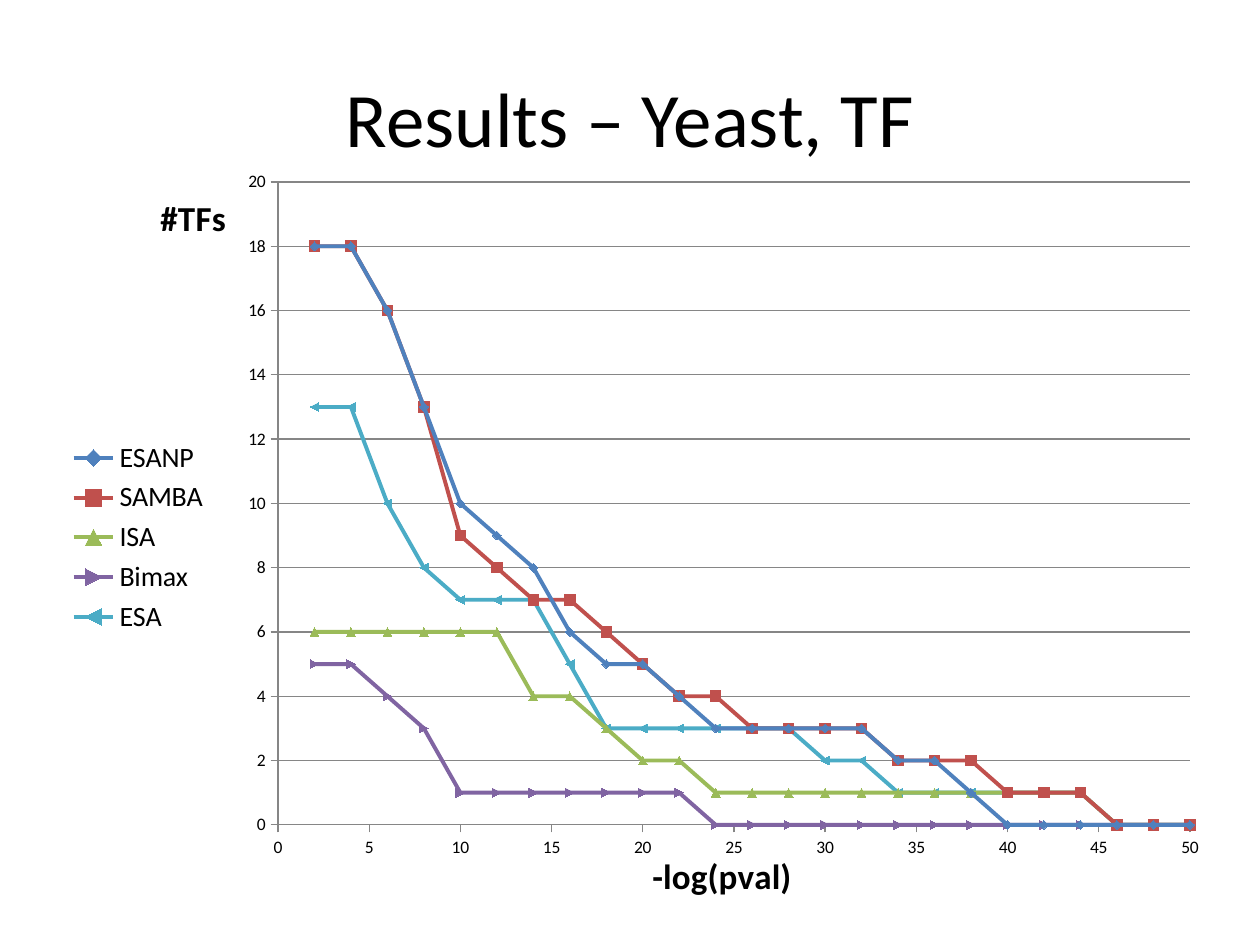
import dataclasses
import typing

import lxml.etree
import pptx
import pptx.chart.data
import pptx.dml.color
import pptx.enum.chart
import pptx.enum.text
import pptx.oxml.ns
import pptx.util

EMU_PER_PX = 914400 / 126
CHART_WIDTH = 1171
CHART_HEIGHT = 745


@dataclasses.dataclass(frozen=True)
class Theme:
    font: str = "Calibri"
    ink: str = "000000"
    rule: str = "868686"
    title_size: int = 44
    axis_title_size: int = 20
    legend_size: int = 16
    tick_size: int = 10
    curve_width: float = 2.25
    rule_width: float = 0.75


@dataclasses.dataclass(frozen=True)
class Curve:
    name: str
    color: str
    counts: tuple[int, ...]
    marker_size: int = 5
    marker_style: typing.Any = None


@dataclasses.dataclass(frozen=True)
class AxisLabel:
    text: str
    left: int
    top: int
    gridlines: bool


THEME = Theme()
THRESHOLDS = range(50, 0, -2)
CURVES = (
    Curve("ESANP", "4F81BD",
          (0, 0, 0, 0, 0, 0, 1, 2, 2, 3, 3, 3, 3, 3, 4, 5, 5, 6, 8, 9, 10, 13, 16, 18, 18)),
    Curve("SAMBA", "C0504D",
          (0, 0, 0, 1, 1, 1, 2, 2, 2, 3, 3, 3, 3, 4, 4, 5, 6, 7, 7, 8, 9, 13, 16, 18, 18),
          6, pptx.enum.chart.XL_MARKER_STYLE.SQUARE),
    Curve("ISA", "9BBB59",
          (0, 0, 0, 1, 1, 1, 1, 1, 1, 1, 1, 1, 1, 1, 2, 2, 3, 4, 4, 6, 6, 6, 6, 6, 6)),
    Curve("Bimax", "8064A2",
          (0, 0, 0, 0, 0, 0, 0, 0, 0, 0, 0, 0, 0, 0, 1, 1, 1, 1, 1, 1, 1, 3, 4, 5, 5)),
    Curve("ESA", "4BACC6",
          (0, 0, 0, 1, 1, 1, 1, 1, 1, 2, 2, 3, 3, 3, 3, 3, 3, 5, 7, 7, 7, 8, 10, 13, 13)),
)
PVALUE_LABEL = AxisLabel("-log(pval)", 592, 680, False)
COUNT_LABEL = AxisLabel("#TFs", 100, 22, True)


def px(length: int) -> pptx.util.Emu:
    return pptx.util.Emu(round(length * EMU_PER_PX))


def assign(target: typing.Any, values: dict[str, typing.Any]) -> None:
    for name, value in values.items():
        setattr(target, name, value)


def style_font(font: typing.Any, size: int, bold: bool = False) -> None:
    assign(font, {"name": THEME.font, "size": pptx.util.Pt(size), "bold": bold})
    font.color.rgb = pptx.dml.color.RGBColor.from_string(THEME.ink)


def style_line(line: typing.Any, color: str, width: float) -> None:
    line.width = pptx.util.Pt(width)
    line.color.rgb = pptx.dml.color.RGBColor.from_string(color)


def set_layout(parent: typing.Any, values: dict[str, typing.Any]) -> None:
    qualify = pptx.oxml.ns.qn
    for old in parent.findall(qualify("c:layout")):
        parent.remove(old)
    layout = lxml.etree.Element(qualify("c:layout"))
    manual = lxml.etree.SubElement(layout, qualify("c:manualLayout"))
    for name, value in values.items():
        lxml.etree.SubElement(manual, qualify(f"c:{name}")).set("val", str(value))
    parent.insert(0 if parent.find(qualify("c:tx")) is None else 1, layout)


def add_title(page: typing.Any, text: str) -> None:
    title = page.shapes.title
    assign(title, {"left": px(63), "top": px(38), "width": px(1134), "height": px(158)})
    frame = title.text_frame
    assign(frame, {"text": text, "word_wrap": True,
                   "vertical_anchor": pptx.enum.text.MSO_ANCHOR.MIDDLE})
    para = frame.paragraphs[0]
    para.alignment = pptx.enum.text.PP_ALIGN.CENTER
    style_font(para.runs[0].font, THEME.title_size)


def style_axis(axis: typing.Any, label: AxisLabel) -> None:
    assign(axis, {"has_major_gridlines": label.gridlines, "has_minor_gridlines": False,
                  "minimum_scale": 0,
                  "major_tick_mark": pptx.enum.chart.XL_TICK_MARK.OUTSIDE,
                  "minor_tick_mark": pptx.enum.chart.XL_TICK_MARK.NONE})
    style_line(axis.format.line, THEME.rule, THEME.rule_width)
    if label.gridlines:
        style_line(axis.major_gridlines.format.line, THEME.rule, THEME.rule_width)
    style_font(axis.tick_labels.font, THEME.tick_size)
    frame = axis.axis_title.text_frame
    frame.text = label.text
    style_font(frame.paragraphs[0].runs[0].font, THEME.axis_title_size, bold=True)
    body = frame._txBody.find(pptx.oxml.ns.qn("a:bodyPr"))
    body.set("rot", "0")
    body.set("vert", "horz")
    set_layout(axis.axis_title._element,
               {"xMode": "edge", "yMode": "edge",
                "x": label.left / CHART_WIDTH, "y": label.top / CHART_HEIGHT})


def style_curve(series: typing.Any, curve: Curve) -> None:
    series.smooth = False
    style_line(series.format.line, curve.color, THEME.curve_width)
    marker = series.marker
    marker.size = curve.marker_size
    if curve.marker_style is not None:
        marker.style = curve.marker_style
    marker.format.fill.solid()
    marker.format.fill.fore_color.rgb = pptx.dml.color.RGBColor.from_string(curve.color)
    style_line(marker.format.line, curve.color, THEME.rule_width)


def add_curve_chart(page: typing.Any, curves: tuple[Curve, ...]) -> None:
    data = pptx.chart.data.XyChartData()
    for curve in curves:
        points = data.add_series(curve.name)
        for threshold, count in zip(THRESHOLDS, curve.counts):
            points.add_data_point(threshold, count)
    chart = page.shapes.add_chart(
        pptx.enum.chart.XL_CHART_TYPE.XY_SCATTER_LINES,
        px(54), px(165), px(CHART_WIDTH), px(CHART_HEIGHT), data).chart
    assign(chart, {"has_title": False, "has_legend": True})
    style_font(chart.font, THEME.tick_size)
    assign(chart.legend, {"position": pptx.enum.chart.XL_LEGEND_POSITION.LEFT,
                          "include_in_layout": False})
    style_font(chart.legend.font, THEME.legend_size)
    plot = chart.plots[0]
    plot.vary_by_categories = False
    for series, curve in zip(plot.series, curves):
        style_curve(series, curve)
    style_axis(chart.category_axis, PVALUE_LABEL)
    chart.category_axis.maximum_scale = 50
    style_axis(chart.value_axis, COUNT_LABEL)
    plot_area = chart._chartSpace.find(".//" + pptx.oxml.ns.qn("c:plotArea"))
    set_layout(plot_area, {"layoutTarget": "inner", "xMode": "edge", "yMode": "edge",
                           "x": 224 / CHART_WIDTH, "y": 17 / CHART_HEIGHT,
                           "w": 912 / CHART_WIDTH, "h": 643 / CHART_HEIGHT})


def main() -> None:
    deck = pptx.Presentation()
    assign(deck, {"slide_width": px(1260), "slide_height": px(945)})
    page = deck.slides.add_slide(deck.slide_layouts[5])
    add_title(page, "Results – Yeast, TF")
    add_curve_chart(page, CURVES)
    deck.save("out.pptx")


if __name__ == "__main__":
    main()
